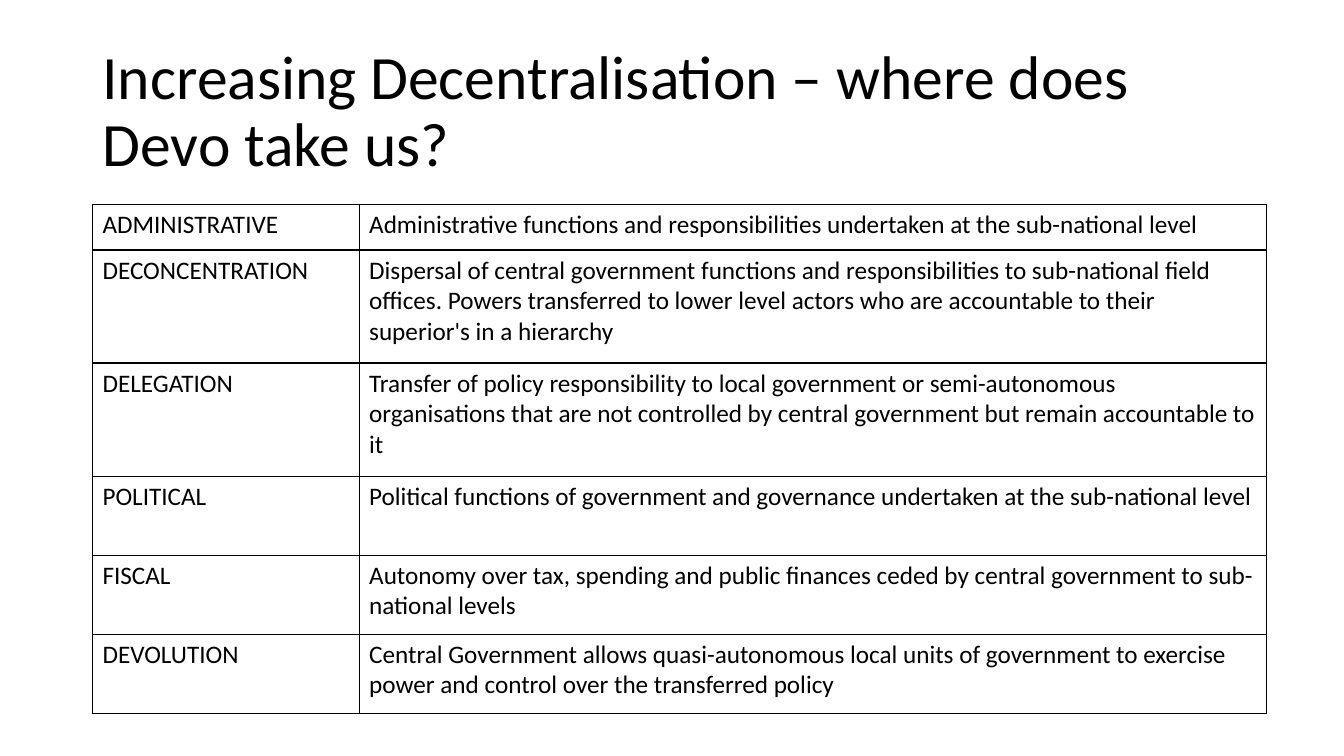
"""Build a slide defining forms of decentralisation in a two-column table."""
from dataclasses import dataclass

from lxml import etree
from pptx import Presentation
from pptx.dml.color import RGBColor
from pptx.enum.text import MSO_ANCHOR, MSO_AUTO_SIZE, PP_ALIGN
from pptx.oxml.ns import qn
from pptx.util import Cm, Pt

LEFT = PP_ALIGN.LEFT
MIDDLE = MSO_ANCHOR.MIDDLE
NO_AUTOFIT = MSO_AUTO_SIZE.NONE
TITLE_ONLY = 5

TITLE = "Increasing Decentralisation – where does Devo take us?"
FORMS = [
    ("ADMINISTRATIVE", "Administrative functions and responsibilities undertaken "
     "at the sub-national level", 1.14),
    ("DECONCENTRATION", "Dispersal of central government functions and "
     "responsibilities to sub-national field offices. Powers transferred to lower "
     "level actors who are accountable to their superior's in a hierarchy", 2.85),
    ("DELEGATION", "Transfer of policy responsibility to local government or "
     "semi-autonomous organisations that are not controlled by central government "
     "but remain accountable to it", 2.85),
    ("POLITICAL", "Political functions of government and governance undertaken "
     "at the sub-national level", 1.99),
    ("FISCAL", "Autonomy over tax, spending and public finances ceded by central "
     "government to sub-national levels", 1.99),
    ("DEVOLUTION", "Central Government allows quasi-autonomous local units of "
     "government to exercise power and control over the transferred policy", 1.99),
]
COLUMN_WIDTHS = (6.72, 22.86)
LEFT_EDGE = 2.33
TABLE_TOP = 5.16


@dataclass(frozen=True)
class Theme:
    font: str = "Calibri"
    ink: str = "000000"
    title_size: int = 44
    cell_size: int = 18
    border_width: int = 1


THEME = Theme()


def write(frame, wording, size):
    paragraph = frame.paragraphs[0]
    paragraph.alignment = LEFT
    run = paragraph.add_run()
    run.text = wording
    run.font.name = THEME.font
    run.font.size = Pt(size)
    run.font.color.rgb = RGBColor.from_string(THEME.ink)
    return paragraph


def outline(cell):
    properties = cell._tc.get_or_add_tcPr()
    for side in ("lnL", "lnR", "lnT", "lnB"):
        border = etree.SubElement(properties, qn(f"a:{side}"),
                                  w=str(Pt(THEME.border_width)))
        fill = etree.SubElement(border, qn("a:solidFill"))
        etree.SubElement(fill, qn("a:srgbClr"), val=THEME.ink)
    cell.fill.background()


def add_title(slide):
    title = slide.shapes.title
    title.left, title.top = Cm(LEFT_EDGE), Cm(1.01)
    title.width, title.height = Cm(29.21), Cm(3.68)
    frame = title.text_frame
    frame.word_wrap = True
    frame.auto_size = NO_AUTOFIT
    frame.vertical_anchor = MIDDLE
    write(frame, TITLE, THEME.title_size).line_spacing = 0.9


def add_forms(slide):
    heights = [height for _, _, height in FORMS]
    table = slide.shapes.add_table(
        len(FORMS), len(COLUMN_WIDTHS), Cm(LEFT_EDGE), Cm(TABLE_TOP),
        Cm(sum(COLUMN_WIDTHS)), Cm(sum(heights))).table
    table.first_row = False
    table.horz_banding = False
    for column, width in zip(table.columns, COLUMN_WIDTHS):
        column.width = Cm(width)
    for row, (form, meaning, height) in zip(table.rows, FORMS):
        row.height = Cm(height)
        for cell, wording in zip(row.cells, (form, meaning)):
            outline(cell)
            write(cell.text_frame, wording, THEME.cell_size)


def main():
    deck = Presentation()
    deck.slide_width, deck.slide_height = Cm(33.87), Cm(19.05)
    slide = deck.slides.add_slide(deck.slide_layouts[TITLE_ONLY])
    add_title(slide)
    add_forms(slide)
    deck.save("out.pptx")


if __name__ == "__main__":
    main()
